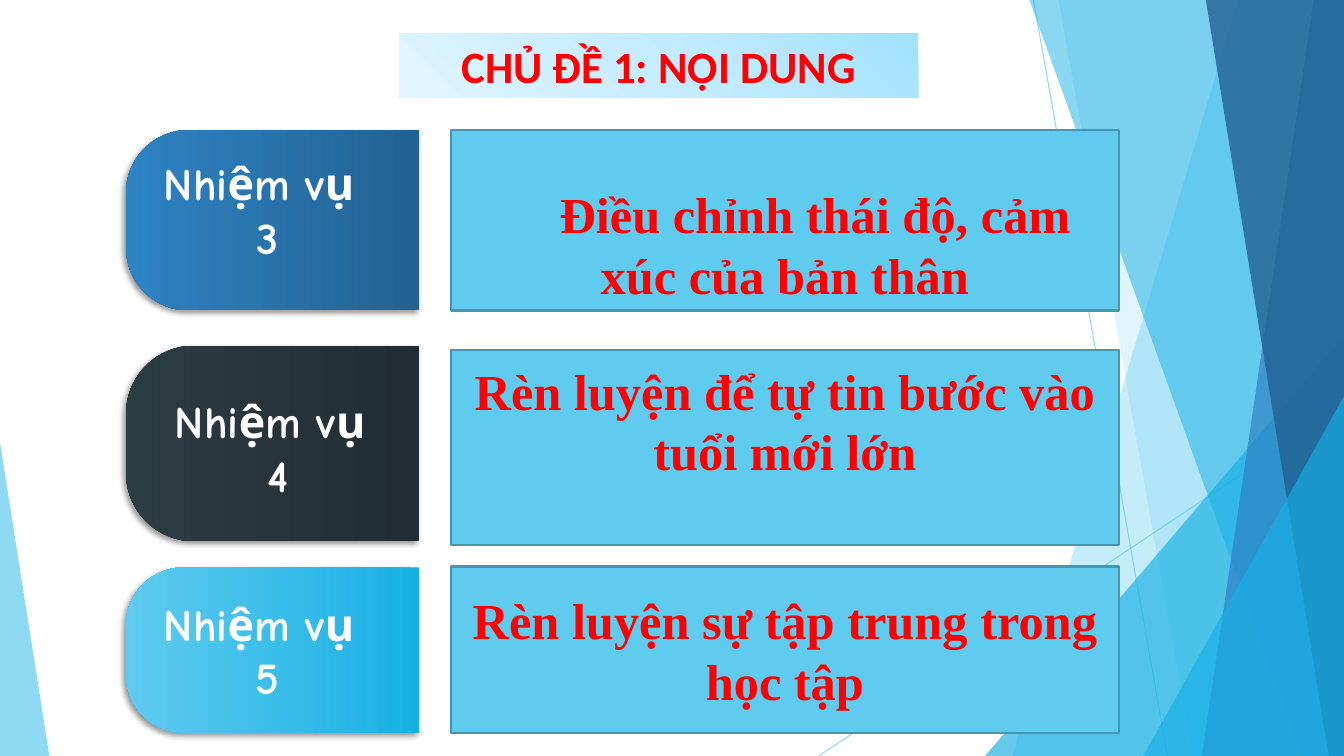
import pptx
import pptx.dml.color
import pptx.enum.shapes
import pptx.enum.text
import pptx.oxml
import pptx.oxml.ns
import pptx.util

Inches, Pt = pptx.util.Inches, pptx.util.Pt
SHAPE = pptx.enum.shapes.MSO_SHAPE
ANCHOR = pptx.enum.text.MSO_ANCHOR
NS = pptx.oxml.ns.nsdecls("a")

COLORS = {
    "sky": "5FCBEF", "cyan": "17B0E4", "blue": "2E83C3", "navy": "226292",
    "slate": "2C3C43", "ink": "212D32", "border": "4696B1",
    "red": "FF0000", "white": "FFFFFF", "black": "000000",
    "ice1": "A2E2FF", "ice2": "C5ECFF", "ice3": "E2F5FF",
}
RIGHT, BOTTOM = 13.33, 7.5

# Task number, tab top and height, label left and top, tab gradient
TABS = [
    (3, 1.29, 1.79, 1.25, 1.49, ("navy", "blue")),
    (4, 3.43, 1.94, 1.36, 3.85, ("ink", "slate")),
    (5, 5.63, 1.64, 1.25, 5.86, ("cyan", "sky")),
]
# Text, top, height, top inset (None centres the text), first-line indent
TOPICS = [
    ("Điều chỉnh thái độ, cảm xúc của bản thân", 1.29, 1.79, 0.53, 0.6),
    ("Rèn luyện để tự tin bước vào tuổi mới lớn", 3.47, 1.94, 0.1, 0),
    ("Rèn luyện sự tập trung trong học tập", 5.62, 1.65, None, 0),
]


def rgb(name):
    return pptx.dml.color.RGBColor.from_string(COLORS[name])


def set_alpha(fill, percent):
    """Make a solid fill partly transparent."""
    clr = fill._xPr.find(".//" + pptx.oxml.ns.qn("a:srgbClr"))
    clr.append(pptx.oxml.parse_xml(f'<a:alpha {NS} val="{percent * 1000}"/>'))


def paint(sp, color, alpha=100):
    sp.shadow.inherit = False
    sp.fill.solid()
    sp.fill.fore_color.rgb = rgb(color)
    if alpha < 100:
        set_alpha(sp.fill, alpha)
    sp.line.fill.background()


def paint_gradient(sp, names, angle):
    """Spread the named colours evenly along the angle."""
    sp.shadow.inherit = False
    sp.line.fill.background()
    step = 100000 // (len(names) - 1)
    stops = "".join(
        f'<a:gs pos="{i * step}"><a:srgbClr val="{COLORS[name]}"/></a:gs>'
        for i, name in enumerate(names))
    grad = pptx.oxml.parse_xml(
        f'<a:gradFill {NS} rotWithShape="1"><a:gsLst>{stops}</a:gsLst>'
        f'<a:lin ang="{angle * 60000}" scaled="0"/></a:gradFill>')
    sp._element.spPr.find(pptx.oxml.ns.qn("a:prstGeom")).addnext(grad)


def add_shape(s, kind, x, y, w, h):
    return s.shapes.add_shape(kind, Inches(x), Inches(y), Inches(w), Inches(h))


def write(sp, lines, font, size, color):
    tf = sp.text_frame
    tf.word_wrap = True
    tf.vertical_anchor = ANCHOR.MIDDLE
    for i, line in enumerate(lines):
        p = tf.paragraphs[0] if i == 0 else tf.add_paragraph()
        p.text = line
        p.alignment = pptx.enum.text.PP_ALIGN.CENTER
        p.font.name, p.font.size, p.font.bold = font, Pt(size), True
        p.font.color.rgb = rgb(color)
    return tf


def add_ray(s, x1, y1, x2, y2):
    line = s.shapes.add_connector(
        pptx.enum.shapes.MSO_CONNECTOR.STRAIGHT,
        Inches(x1), Inches(y1), Inches(x2), Inches(y2))
    line.line.width = Pt(0.75)
    line.line.color.rgb = rgb("sky")
    set_alpha(line.line.fill, 70)
    line._element.spPr.append(pptx.oxml.parse_xml(f"<a:effectLst {NS}/>"))


def add_band(s, top_x, bottom_x, color, alpha):
    """A facet from a slanted left edge to the right edge of the slide."""
    corners = [(RIGHT, 0), (RIGHT, BOTTOM), (bottom_x, BOTTOM)]
    fb = s.shapes.build_freeform(Inches(top_x), 0)
    fb.add_line_segments([(Inches(x), Inches(y)) for x, y in corners])
    paint(fb.convert_to_shape(), color, alpha)


def add_triangle(s, x, y, w, apex, color, alpha):
    sp = add_shape(s, SHAPE.ISOSCELES_TRIANGLE, x, y, w, BOTTOM - y)
    sp.adjustments[0] = apex
    paint(sp, color, alpha)


def add_backdrop(s):
    add_ray(s, 10.25, 0, 11.58, BOTTOM)
    add_ray(s, RIGHT, 4.03, 8.12, BOTTOM)
    add_band(s, 12.28, 10.04, "sky", 36)
    add_band(s, 10.5, 11.83, "sky", 20)
    add_triangle(s, 9.77, 3.33, 3.56, 1, "cyan", 66)
    add_band(s, 10.21, 12.91, "cyan", 50)
    add_band(s, 13.03, 11.92, "blue", 70)
    add_band(s, 11.96, 13.18, "navy", 80)
    add_triangle(s, 11.34, 3.93, 1.99, 1, "cyan", 66)
    add_triangle(s, 0, 4.39, 0.49, 0, "sky", 70)


def add_title(s, text):
    sp = add_shape(s, SHAPE.RECTANGLE, 3.96, 0.33, 5.15, 0.64)
    paint_gradient(sp, ("ice1", "ice2", "ice3"), 135)
    tf = write(sp, [text], "Calibri", 32, "red")
    tf.auto_size = pptx.enum.text.MSO_AUTO_SIZE.SHAPE_TO_FIT_TEXT


def add_tab(s, number, top, height, label_x, label_y, names):
    # The tab stands upright and is turned so its round end faces left
    left, width = 1.25, 2.91
    shift = (width - height) / 2
    sp = add_shape(s, SHAPE.ROUND_2_SAME_RECTANGLE,
                   left + shift, top - shift, height, width)
    sp.adjustments[0], sp.adjustments[1] = 0.347, 0
    sp.rotation = 270
    sp._element.spPr.xfrm.set("flipH", "1")
    paint_gradient(sp, names, 270)
    effects = sp._element.spPr.find(pptx.oxml.ns.qn("a:effectLst"))
    effects.append(pptx.oxml.parse_xml(
        f'<a:outerShdw {NS} blurRad="{Pt(4)}" dist="{Pt(3)}" dir="8100000" '
        f'rotWithShape="0"><a:srgbClr val="{COLORS["black"]}">'
        '<a:alpha val="40000"/></a:srgbClr></a:outerShdw>'))

    label = s.shapes.add_textbox(
        Inches(label_x), Inches(label_y), Inches(2.8), Inches(1.18))
    tf = write(label, ["Nhiệm vụ ", str(number)], "Comic Neue", 32, "white")
    tf.auto_size = pptx.enum.text.MSO_AUTO_SIZE.SHAPE_TO_FIT_TEXT


def add_topic(s, text, top, height, inset, indent):
    sp = add_shape(s, SHAPE.RECTANGLE, 4.47, top, 6.63, height)
    paint(sp, "sky")
    sp.line.color.rgb = rgb("border")
    sp.line.width = Pt(1.5)
    tf = write(sp, [text], "Times New Roman", 36, "red")
    if inset is not None:
        tf.vertical_anchor = ANCHOR.TOP
        tf.margin_top = Inches(inset)
    if indent:
        pPr = tf.paragraphs[0]._p.get_or_add_pPr()
        pPr.set("indent", str(Inches(indent)))


def main():
    prs = pptx.Presentation()
    prs.slide_width, prs.slide_height = Inches(RIGHT), Inches(BOTTOM)
    s = prs.slides.add_slide(prs.slide_layouts[6])

    add_backdrop(s)
    add_title(s, "CHỦ ĐỀ 1: NỘI DUNG")
    for tab in TABS:
        add_tab(s, *tab)
    for topic in TOPICS:
        add_topic(s, *topic)

    prs.save("out.pptx")


if __name__ == "__main__":
    main()
